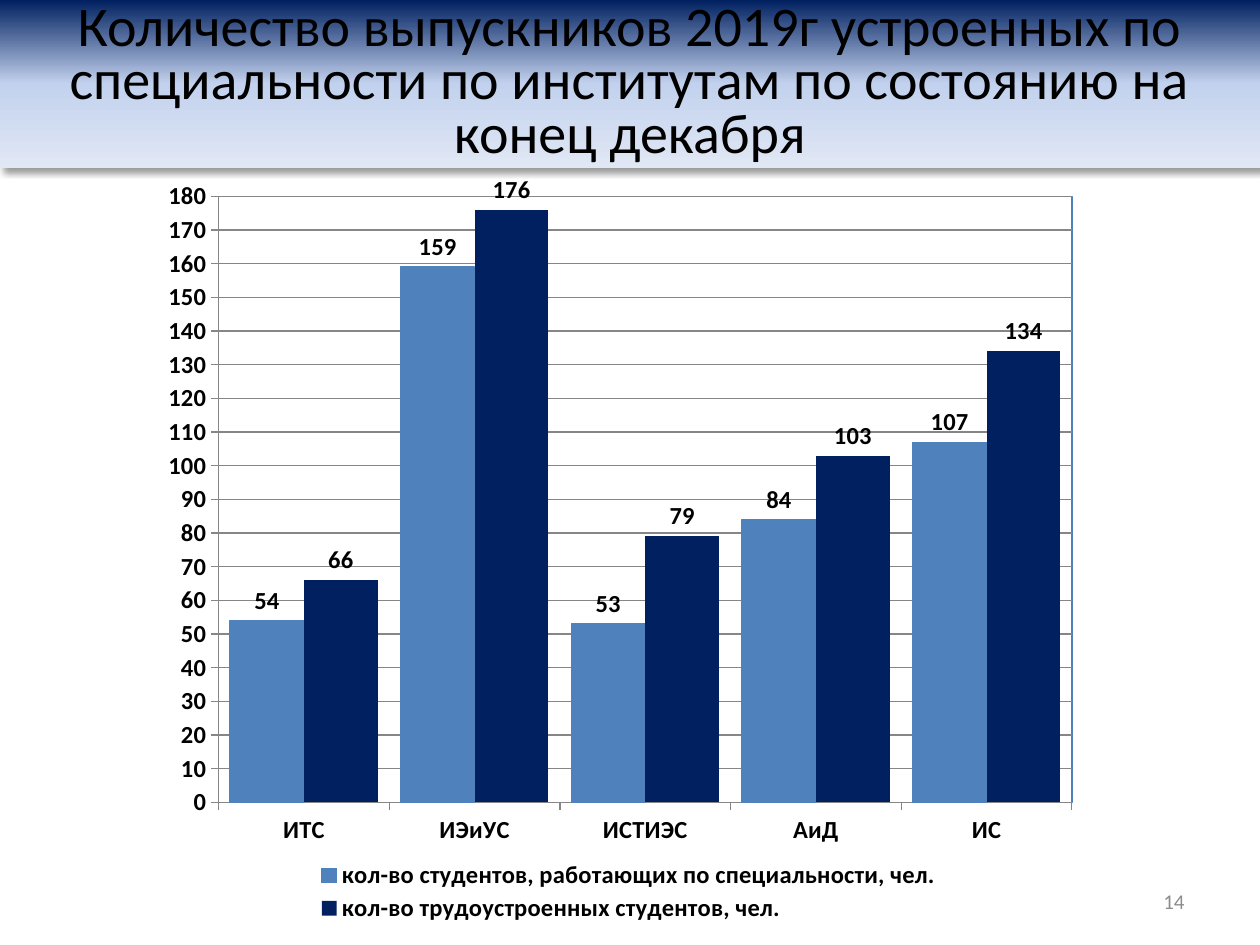
from pptx import Presentation
from pptx import util as u
from pptx.chart.data import CategoryChartData
from pptx.dml.color import RGBColor
from pptx.enum import chart as ch, shapes, text
from pptx.oxml import parse_xml
from pptx.oxml.ns import nsdecls, qn

BLACK = RGBColor(0x00, 0x00, 0x00)
GREY = RGBColor(0x8C, 0x8C, 0x8C)
GRID = RGBColor(0x86, 0x86, 0x86)
BLUE = RGBColor(0x4F, 0x81, 0xBD)
NAVY = RGBColor(0x00, 0x20, 0x60)
FONT = "Calibri"

TITLE = ("Количество выпускников 2019г устроенных по специальности "
         "по институтам по состоянию на конец декабря")
PAGE_NUMBER = "14"
INSTITUTES = ["ИТС", "ИЭиУС", "ИСТИЭС", "АиД", "ИС"]
SERIES = [
    ("кол-во студентов, работающих по специальности, чел.", (54, 159, 53, 84, 107), BLUE),
    ("кол-во трудоустроенных студентов, чел. ", (66, 176, 79, 103, 134), NAVY),
]
BANNER_STOPS = [(0, NAVY), (50, RGBColor(0xC2, 0xD1, 0xED)), (100, RGBColor(0xE1, 0xE8, 0xF5))]


def write(shape, content, size, color, alignment):
    frame = shape.text_frame
    frame.text = content
    frame.word_wrap = True
    frame.vertical_anchor = text.MSO_ANCHOR.MIDDLE
    paragraph = frame.paragraphs[0]
    paragraph.alignment = alignment
    font = paragraph.runs[0].font
    font.name, font.size, font.color.rgb = FONT, u.Pt(size), color
    return paragraph


def add_gradient_and_shadow(shape, stops):
    """Fill from top to bottom and cast a soft shadow to the lower right."""
    properties = shape._element.spPr
    stop_xml = "".join(f'<a:gs pos="{position * 1000}"><a:srgbClr val="{color}"/></a:gs>'
                       for position, color in stops)
    gradient = parse_xml(f'<a:gradFill {nsdecls("a")} rotWithShape="1"><a:gsLst>{stop_xml}</a:gsLst>'
                         '<a:lin ang="5400000" scaled="0"/></a:gradFill>')
    properties.find(qn("a:prstGeom")).addnext(gradient)
    effects = properties.find(qn("a:effectLst"))
    effects.append(parse_xml(
        f'<a:outerShdw {nsdecls("a")} blurRad="{u.Pt(4)}" dist="{u.Pt(3)}" dir="2700000" '
        'algn="tl" rotWithShape="0"><a:srgbClr val="000000"><a:alpha val="40000"/>'
        '</a:srgbClr></a:outerShdw>'))


def manual_layout(x, y, width, height, target=""):
    return parse_xml(
        f'<c:layout {nsdecls("c")}><c:manualLayout>{target}'
        '<c:xMode val="edge"/><c:yMode val="edge"/>'
        f'<c:x val="{x}"/><c:y val="{y}"/><c:w val="{width}"/><c:h val="{height}"/>'
        '</c:manualLayout></c:layout>')


def add_bar_chart(slide):
    data = CategoryChartData()
    data.categories = INSTITUTES
    for name, values, _ in SERIES:
        data.add_series(name, values)
    chart = slide.shapes.add_chart(ch.XL_CHART_TYPE.COLUMN_CLUSTERED, u.Cm(2.77), u.Cm(3.38),
                                   u.Cm(19.05), u.Cm(15.29), data).chart
    chart.has_title = False
    chart.font.name, chart.font.size, chart.font.bold = FONT, u.Pt(14), True
    chart.font.color.rgb = BLACK

    plot = chart.plots[0]
    plot.gap_width, plot.overlap, plot.vary_by_categories = 31, 0, False
    for series, (_, _, color) in zip(plot.series, SERIES):
        series.format.fill.solid()
        series.format.fill.fore_color.rgb = color
        labels = series.data_labels
        labels.show_value = True
        labels.position = ch.XL_LABEL_POSITION.OUTSIDE_END
    first_line = plot.series[0].format.line
    first_line.color.rgb, first_line.width = BLUE, u.Pt(0.75)

    value_axis = chart.value_axis
    value_axis.minimum_scale, value_axis.maximum_scale, value_axis.major_unit = 0, 180, 10
    value_axis.has_major_gridlines = True
    for line in (value_axis.major_gridlines.format.line, value_axis.format.line,
                 chart.category_axis.format.line):
        line.color.rgb, line.width = GRID, u.Pt(0.75)

    chart.has_legend = True
    legend = chart.legend
    legend.position = ch.XL_LEGEND_POSITION.RIGHT
    legend.include_in_layout = False
    for layout in legend._element.findall(qn("c:layout")):
        legend._element.remove(layout)
    legend._element.find(qn("c:legendPos")).addnext(manual_layout(0.18, 0.91, 0.68, 0.09))

    area = chart._chartSpace.chart.plotArea
    for layout in area.findall(qn("c:layout")):
        area.remove(layout)
    area.insert(0, manual_layout(0.086, 0.038, 0.903, 0.799, '<c:layoutTarget val="inner"/>'))
    area.append(parse_xml(
        f'<c:spPr {nsdecls("c", "a")}><a:noFill/><a:ln w="{u.Pt(0.75)}"><a:solidFill>'
        f'<a:srgbClr val="{BLUE}"/></a:solidFill></a:ln></c:spPr>'))


def main():
    presentation = Presentation()
    presentation.slide_width, presentation.slide_height = u.Cm(25.4), u.Cm(19.05)
    slide = presentation.slides.add_slide(presentation.slide_layouts[6])

    page_number = slide.shapes.add_textbox(u.Cm(18.2), u.Cm(17.66), u.Cm(5.93), u.Cm(1.01))
    write(page_number, PAGE_NUMBER, 12, GREY, text.PP_ALIGN.RIGHT)

    banner = slide.shapes.add_shape(shapes.MSO_SHAPE.RECTANGLE, 0, 0,
                                    presentation.slide_width, u.Cm(3.38))
    banner.shadow.inherit = False
    banner.line.fill.background()
    add_gradient_and_shadow(banner, BANNER_STOPS)
    write(banner, TITLE, 32, BLACK, text.PP_ALIGN.CENTER).line_spacing = 0.8

    add_bar_chart(slide)
    presentation.save("out.pptx")


if __name__ == "__main__":
    main()
